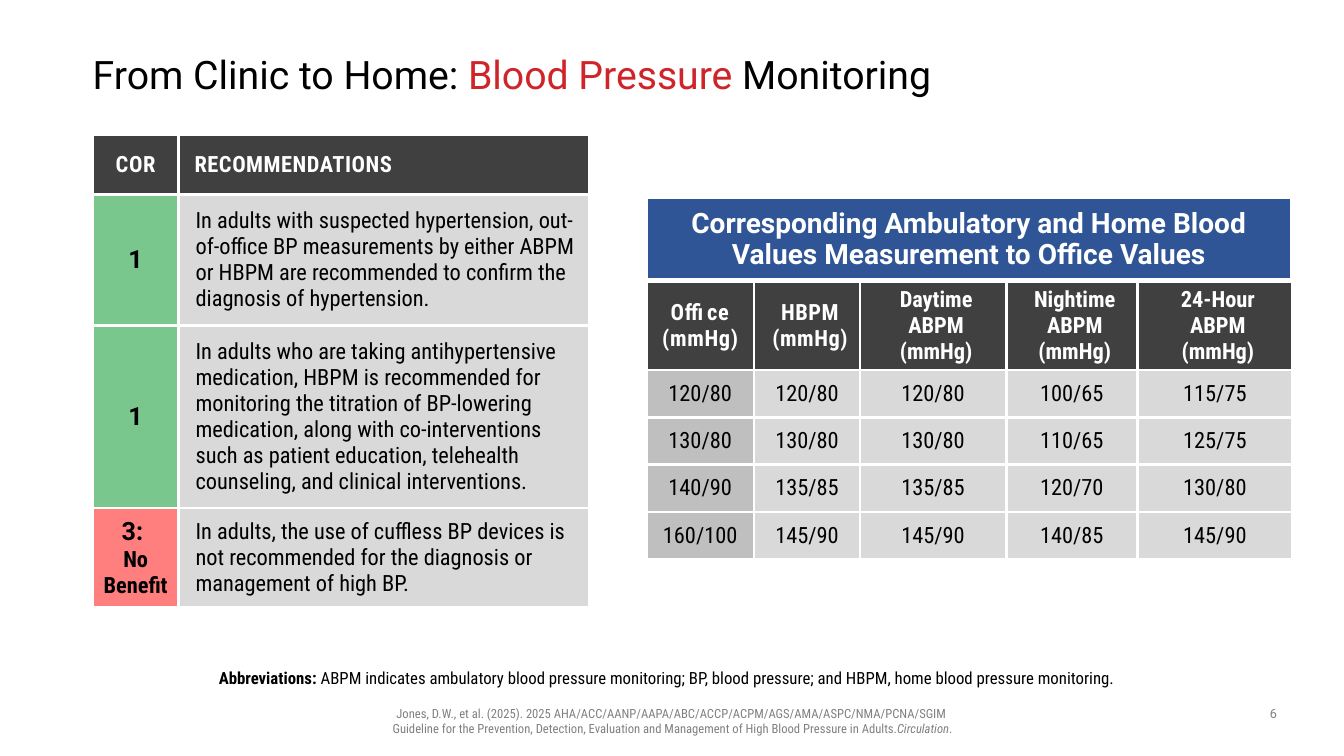
"""Build the blood pressure monitoring slide."""
from dataclasses import dataclass
from itertools import chain

from lxml.etree import SubElement
from pptx import Presentation
from pptx.dml.color import RGBColor
from pptx.enum.shapes import MSO_SHAPE as Shape
from pptx.enum.text import MSO_ANCHOR as Anchor, PP_ALIGN as Align
from pptx.oxml.ns import qn
from pptx.util import Pt

PX = 9144
ROBOTO, CONDENSED = "Roboto", "Roboto Condensed"
BLACK, WHITE, RED, BLUE = "000000", "FFFFFF", "CF242A", "2F5597"
DARK, MID, LIGHT, FOOTER = "404040", "BFBFBF", "D9D9D9", "808080"
GREEN, PINK = "79C78D", "FF7F7F"


@dataclass(frozen=True)
class Run:
    text: str
    size: int = 16
    font: str = CONDENSED
    color: str = BLACK
    bold: bool = False
    italic: bool = False
    spacing: int = 0


@dataclass(frozen=True)
class TextBox:
    box: tuple[int, int, int, int]
    runs: tuple[Run, ...]
    align: Align = Align.CENTER
    anchor: Anchor = Anchor.MIDDLE
    insets: tuple[int, int, int, int] = (0, 0, 0, 0)
    line: float = 0.9


@dataclass(frozen=True)
class Cell:
    runs: tuple[Run, ...]
    fill: str
    align: Align = Align.CENTER
    indent: int = 0
    insets: tuple[int, int, int, int] = (10, 5, 10, 5)


@dataclass(frozen=True)
class Table:
    left: int
    top: int
    cols: tuple[int, ...]
    rows: tuple[int, ...]
    cells: list[list[Cell]]


def rgb(color: str) -> RGBColor:
    """Turn a hex string into a colour."""
    return RGBColor.from_string(color)


def emu(lengths: tuple[int, ...]) -> list[int]:
    """Turn px lengths into EMU."""
    return [n * PX for n in lengths]


def add_runs(p, runs: tuple[Run, ...]) -> None:
    """Write formatted runs, with line breaks at newlines."""
    for run in runs:
        for i, part in enumerate(run.text.split("\n")):
            if i:
                p.add_line_break()
                SubElement(p._p.findall(qn("a:br"))[-1], qn("a:rPr"), sz=str(run.size * 100))
            if not part:
                continue
            r = p.add_run()
            r.text = part
            f = r.font
            f.name, f.size = run.font, Pt(run.size)
            f.bold, f.italic = run.bold, run.italic
            f.color.rgb = rgb(run.color)
            if run.spacing:
                r._r.get_or_add_rPr().set("spc", str(run.spacing))


def set_margins(target, insets: tuple[int, ...]) -> None:
    """Set the inner margins of a text frame or cell."""
    (target.margin_left, target.margin_top,
     target.margin_right, target.margin_bottom) = emu(insets)


def draw_text(s, item: TextBox) -> None:
    """Draw one text box."""
    tf = s.shapes.add_textbox(*emu(item.box)).text_frame
    tf.word_wrap = True
    tf.vertical_anchor = item.anchor
    set_margins(tf, item.insets)
    p = tf.paragraphs[0]
    p.alignment, p.line_spacing = item.align, item.line
    add_runs(p, item.runs)


def draw_banner(s, box: tuple[int, ...]) -> None:
    """Draw the blue band above the values table."""
    sp = s.shapes.add_shape(Shape.RECTANGLE, *emu(box))
    sp.shadow.inherit = False
    sp.fill.solid()
    sp.fill.fore_color.rgb = rgb(BLUE)
    sp.line.color.rgb = rgb(WHITE)
    sp.line.width = Pt(2.25)


def draw_cell(target, item: Cell) -> None:
    """Fill, border and write one table cell."""
    tc_pr = target._tc.get_or_add_tcPr()
    for side in ("lnL", "lnR", "lnT", "lnB"):
        ln = SubElement(tc_pr, qn(f"a:{side}"), w=str(Pt(2.25)))
        SubElement(SubElement(ln, qn("a:solidFill")), qn("a:srgbClr"), val=WHITE)
    target.fill.solid()
    target.fill.fore_color.rgb = rgb(item.fill)
    target.vertical_anchor = Anchor.MIDDLE
    set_margins(target, item.insets)
    p = target.text_frame.paragraphs[0]
    p.alignment = item.align
    if item.indent:
        p._p.get_or_add_pPr().set("marL", str(item.indent * PX))
    add_runs(p, item.runs)


def draw_table(s, item: Table) -> None:
    """Draw one table."""
    size = emu((item.left, item.top, sum(item.cols), sum(item.rows)))
    table = s.shapes.add_table(len(item.rows), len(item.cols), *size).table
    table.first_row = table.horz_banding = False
    for col, width in zip(table.columns, emu(item.cols)):
        col.width = width
    for row, height in zip(table.rows, emu(item.rows)):
        row.height = height
    for target, cell in zip(table.iter_cells(), chain.from_iterable(item.cells)):
        draw_cell(target, cell)


def header(text: str, spacing: int, indent: int = 6, align: Align = Align.CENTER) -> Cell:
    """Describe a dark header cell."""
    return Cell((Run(text, color=WHITE, bold=True, spacing=spacing),), DARK, align, indent)


def advice(grade: tuple[Run, ...], fill: str, text: str) -> list[Cell]:
    """Describe one recommendation row."""
    insets = (5, 5, 5, 5)
    return [Cell(grade, fill, insets=insets),
            Cell((Run(text),), LIGHT, Align.LEFT, 12, insets)]


def values(line: str) -> list[Cell]:
    """Describe one row of pressure values, office column first."""
    return [Cell((Run(v),), LIGHT if i else MID) for i, v in enumerate(line.split())]


CLASS_1 = (Run("1", 18, ROBOTO, bold=True),)
CLASS_3 = (Run("3: \n", 18, ROBOTO, bold=True), Run("No Benefit", bold=True))
RECOMMENDATIONS = Table(92, 134, (85, 408), (59, 130, 181, 99), [
    [header("COR", 50, 0), header("RECOMMENDATIONS", 40, align=Align.LEFT)],
    advice(CLASS_1, GREEN, "In adults with suspected hypertension, out-of-office BP measurements by "
           "either ABPM or HBPM are recommended to confirm the diagnosis of hypertension."),
    advice(CLASS_1, GREEN, "In adults who are taking antihypertensive medication, HBPM is recommended "
           "for monitoring the titration of BP-lowering medication, along with co-interventions such "
           "as patient education, telehealth counseling, and clinical interventions."),
    advice(CLASS_3, PINK, "In adults, the use of cuffless BP devices is not recommended for the "
           "diagnosis or management of high BP."),
])
PRESSURES = Table(641, 279, (107, 105, 145, 130, 154), (88, 47, 47, 47, 47), [
    [header("Office (mmHg)", 50, 0), header("HBPM (mmHg)", 40),
     *(header(f"{time} ABPM (mmHg)", 0) for time in ("Daytime", "Nightime", "24-Hour"))],
    *map(values, ("120/80 120/80 120/80 100/65 115/75", "130/80 130/80 130/80 110/65 125/75",
                  "140/90 135/85 135/85 120/70 130/80", "160/100 145/90 145/90 140/85 145/90")),
])
TEXTS = (
    TextBox((92, 40, 1150, 72), (
        Run("From Clinic to Home: ", 28, ROBOTO), Run("Blood Pressure ", 28, ROBOTO, RED),
        Run("Monitoring", 28, ROBOTO)), Align.LEFT),
    TextBox((649, 200, 624, 76), (
        Run("Corresponding Ambulatory and Home Blood Values Measurement to Office Values",
            20, ROBOTO, WHITE, True),)),
    TextBox((188, 642, 957, 46), (
        Run("Abbreviations: ", 12, bold=True),
        Run("ABPM indicates ambulatory blood pressure monitoring; BP, blood pressure; "
            "and HBPM, home blood pressure monitoring.", 12)),
        anchor=Anchor.BOTTOM, insets=(0, 5, 10, 5)),
    TextBox((236, 695, 862, 40), (
        Run("Jones, D.W., et al. (2025). 2025 AHA/ACC/AANP/AAPA/ABC/ACCP/ACPM/AGS/AMA/ASPC/NMA/PCNA/SGIM \n"
            "Guideline for the Prevention, Detection, Evaluation and Management of High Blood Pressure "
            "in Adults.", 9, color=FOOTER),
        Run("Circulation", 9, color=FOOTER, italic=True), Run(".", 9, color=FOOTER)),
        anchor=Anchor.TOP, insets=(10, 5, 10, 5), line=1.0),
    TextBox((1242, 695, 42, 26), (Run("6", 9, ROBOTO, FOOTER),),
            anchor=Anchor.TOP, insets=(10, 5, 10, 5), line=1.0),
)


def main() -> None:
    """Build and save the slide."""
    prs = Presentation()
    prs.slide_width, prs.slide_height = emu((1333, 750))
    s = prs.slides.add_slide(prs.slide_layouts[6])
    draw_banner(s, (641, 196, 640, 81))
    for table in (RECOMMENDATIONS, PRESSURES):
        draw_table(s, table)
    for text in TEXTS:
        draw_text(s, text)
    prs.save("out.pptx")


if __name__ == "__main__":
    main()
